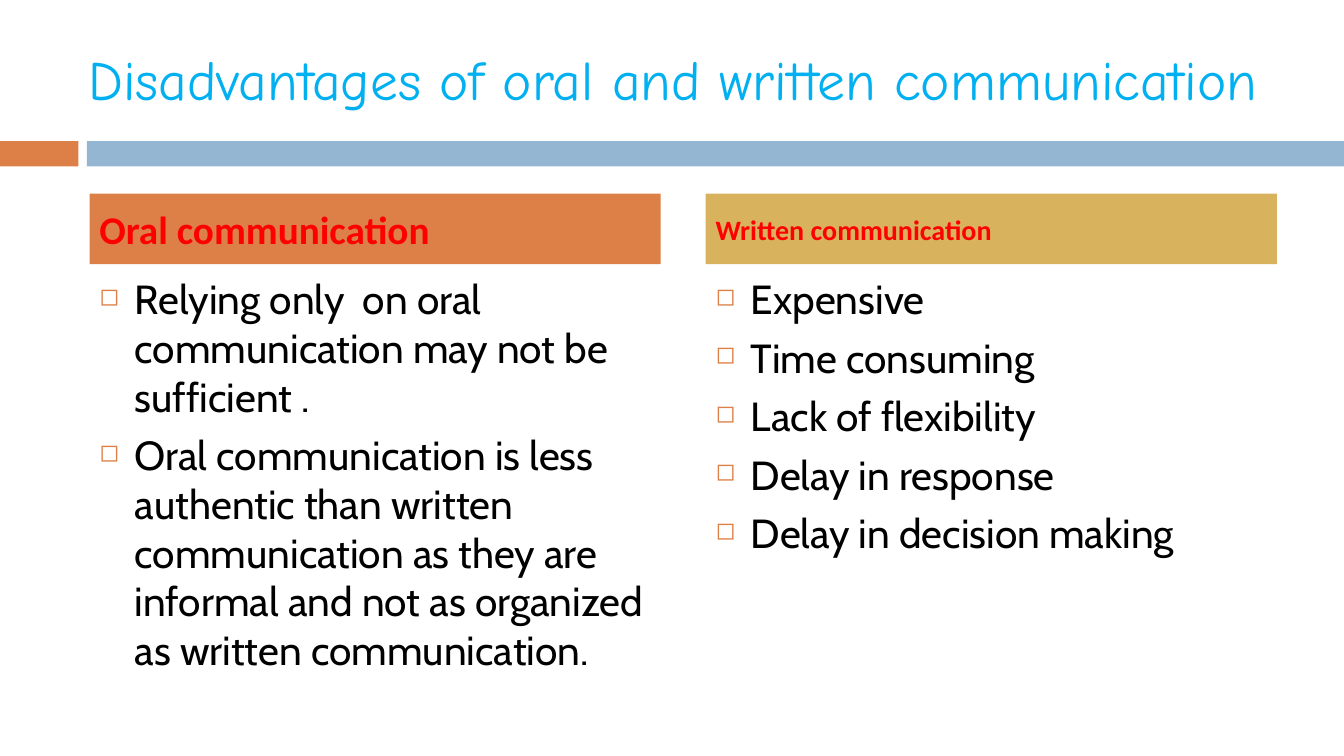
from dataclasses import dataclass

from lxml import etree
from pptx import Presentation
from pptx.dml.color import RGBColor
from pptx.enum.shapes import MSO_SHAPE
from pptx.enum.text import MSO_ANCHOR, PP_ALIGN
from pptx.oxml.ns import qn
from pptx.util import Inches, Pt

RECT = MSO_SHAPE.RECTANGLE
TOP, MIDDLE = MSO_ANCHOR.TOP, MSO_ANCHOR.MIDDLE
LEFT = PP_ALIGN.LEFT

ORANGE = RGBColor(0xDD, 0x80, 0x47)
BLUE = RGBColor(0x94, 0xB6, 0xD2)
GOLD = RGBColor(0xD8, 0xB2, 0x5C)
SKY = RGBColor(0x00, 0xB0, 0xF0)
RED = RGBColor(0xFF, 0x00, 0x00)
BLACK = RGBColor(0x00, 0x00, 0x00)

WIDE, HIGH = Inches(13.33), Inches(7.5)
COLS, ROWS = 120, 75
INDENT = Inches(0.35)
GAP = Pt(7)

TITLE = {"name": "Comic Neue", "size": Pt(39.6)}
HEAD = {"name": "Calibri", "bold": True}
BODY = {"name": "Cabin", "size": Pt(29)}


@dataclass
class Area:
    col: float
    row: float
    cols: float
    rows: float

    def place(self) -> tuple[int, int, int, int]:
        return (
            round(WIDE * self.col / COLS),
            round(HIGH * self.row / ROWS),
            round(WIDE * self.cols / COLS),
            round(HIGH * self.rows / ROWS),
        )


@dataclass
class Panel:
    col: float
    head: str
    size: int
    fill: RGBColor
    points: list[str]


BARS = [(Area(0, 14, 7, 2.5), ORANGE), (Area(7.75, 14, 112.25, 2.5), BLUE)]

PANELS = [
    Panel(8, "Oral communication", 28, ORANGE, [
        "Relying only  on oral communication may not be sufficient .",
        "Oral communication is less authentic than written communication "
        "as they are informal and not as organized as written communication.",
    ]),
    Panel(63, "Written communication", 20, GOLD, [
        "Expensive",
        "Time consuming",
        "Lack of flexibility",
        "Delay in response",
        "Delay in decision making",
    ]),
]


def add_bar(slide, area: Area, fill: RGBColor):
    bar = slide.shapes.add_shape(RECT, *area.place())
    bar.shadow.inherit = False
    bar.fill.solid()
    bar.fill.fore_color.rgb = fill
    bar.line.fill.background()
    return bar


def add_box(slide, area: Area):
    return slide.shapes.add_textbox(*area.place())


def add_mark(para) -> None:
    props = para._p.get_or_add_pPr()
    props.set("marL", str(INDENT))
    props.set("indent", str(-INDENT))
    tint = etree.SubElement(props, qn("a:buClr"))
    etree.SubElement(tint, qn("a:srgbClr"), val=str(ORANGE))
    etree.SubElement(props, qn("a:buSzPct"), val="60000")
    etree.SubElement(props, qn("a:buChar"), char="◻")


def write(shape, lines: list[str], style: dict, tint: RGBColor,
          anchor=MIDDLE, marked: bool = False) -> None:
    frame = shape.text_frame
    frame.word_wrap = True
    frame.vertical_anchor = anchor
    for count, line in enumerate(lines):
        para = frame.add_paragraph() if count else frame.paragraphs[0]
        para.alignment = LEFT
        if count:
            para.space_before = GAP
        if marked:
            add_mark(para)
        run = para.add_run()
        run.text = line
        for key, value in style.items():
            setattr(run.font, key, value)
        run.font.color.rgb = tint


def add_panel(slide, panel: Panel) -> None:
    body = add_box(slide, Area(panel.col, 26.7, 51, 39.2))
    write(body, panel.points, BODY, BLACK, TOP, True)
    head = add_bar(slide, Area(panel.col, 19.2, 51, 7), panel.fill)
    write(head, [panel.head], HEAD | {"size": Pt(panel.size)}, RED)


def main() -> None:
    deck = Presentation()
    deck.slide_width, deck.slide_height = WIDE, HIGH
    slide = deck.slides.add_slide(deck.slide_layouts[6])
    for area, fill in BARS:
        add_bar(slide, area, fill)
    title = add_box(slide, Area(7, 3, 107, 9.5))
    write(title, ["Disadvantages of oral and written communication"], TITLE, SKY)
    for panel in PANELS:
        add_panel(slide, panel)
    deck.save("out.pptx")


if __name__ == "__main__":
    main()
